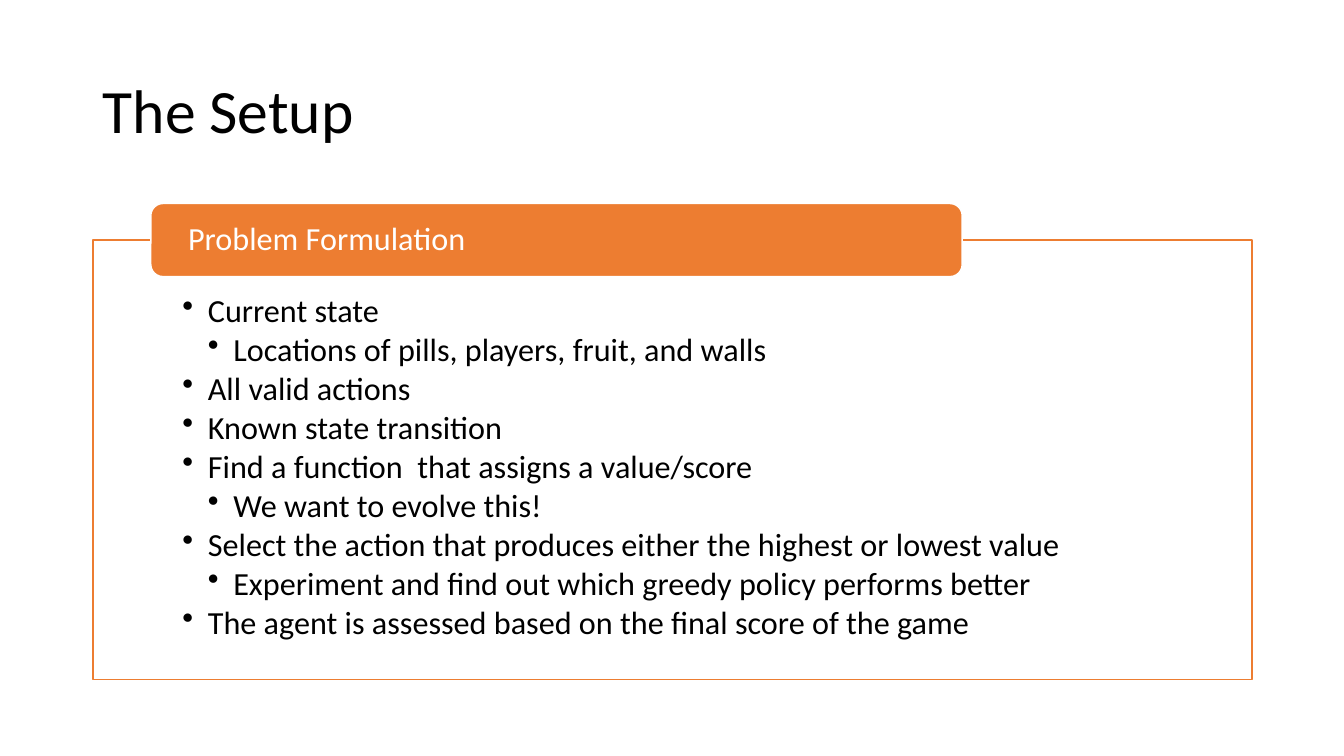
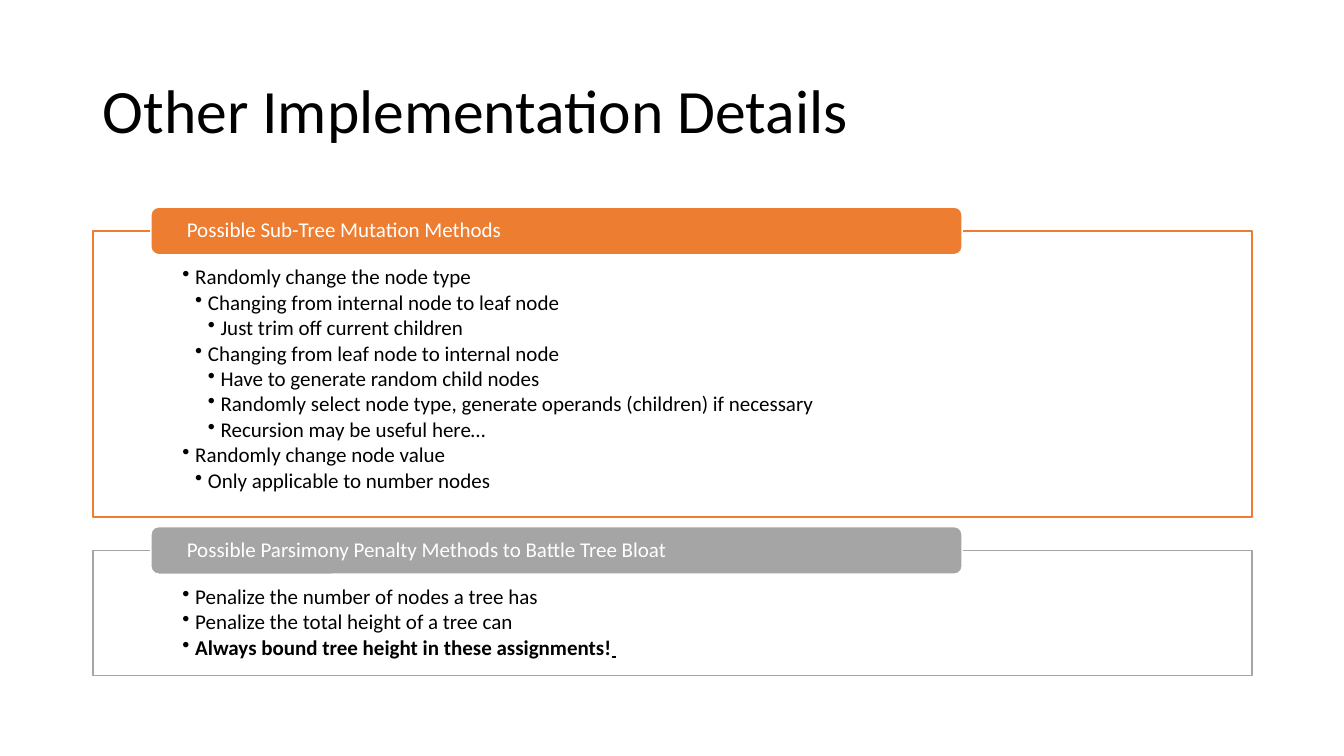
from lxml import etree
from pptx import Presentation
from pptx import util as u
from pptx.dml.color import RGBColor
from pptx.enum import shapes, text
from pptx.oxml.ns import qn

BLACK = RGBColor(0x00, 0x00, 0x00)
WHITE = RGBColor(0xFF, 0xFF, 0xFF)
ORANGE = RGBColor(0xED, 0x7D, 0x31)
GRAY = RGBColor(0xA5, 0xA5, 0xA5)

SETUP = [
    (1, "Current state"),
    (2, "Locations of pills, players, fruit, and walls"),
    (1, "All valid actions"),
    (1, "Known state transition"),
    (1, "Find a function  that assigns a value/score"),
    (2, "We want to evolve this!"),
    (1, "Select the action that produces either the highest or lowest value"),
    (2, "Experiment and find out which greedy policy performs better"),
    (1, "The agent is assessed based on the final score of the game"),
]
MUTATION = [
    (1, "Randomly change the node type"),
    (2, "Changing from internal node to leaf node"),
    (3, "Just trim off current children"),
    (2, "Changing from leaf node to internal node"),
    (3, "Have to generate random child nodes"),
    (3, "Randomly select node type, generate operands (children) if necessary"),
    (3, "Recursion may be useful here…"),
    (1, "Randomly change node value"),
    (2, "Only applicable to number nodes"),
]
PARSIMONY = [
    (1, "Penalize the number of nodes a tree has"),
    (1, "Penalize the total height of a tree can"),
    (1, "Always bound tree height in these assignments!"),
]


class Slides:
    font = "Calibri"
    left, width = 2.34, 29.21

    def __init__(self):
        self.deck = Presentation()
        self.deck.slide_width = u.Cm(33.87)
        self.deck.slide_height = u.Cm(19.05)
        self.page = None

    def start(self, title):
        self.page = self.deck.slides.add_slide(self.deck.slide_layouts[6])
        box = self.page.shapes.add_textbox(
            u.Cm(self.left), u.Cm(1.01), u.Cm(self.width), u.Cm(3.68))
        box.text_frame.word_wrap = True
        box.text_frame.vertical_anchor = text.MSO_ANCHOR.MIDDLE
        self.set_text(box.text_frame.paragraphs[0], title, 44, BLACK)

    def set_text(self, para, words, size, color):
        para.text = words
        para.alignment = text.PP_ALIGN.LEFT
        para.line_spacing = 0.9
        para.font.name = self.font
        para.font.size = u.Pt(size)
        para.font.color.rgb = color

    def bullet(self, para, level, step):
        para.level = level - 1
        props = para._p.get_or_add_pPr()
        props.set("marL", str(u.Cm(step * level)))
        props.set("indent", str(-u.Cm(step)))
        etree.SubElement(props, qn("a:buChar")).set("char", "•")

    def block(self, kind, place, fill, line, margins, anchor):
        box = self.page.shapes.add_shape(kind, *map(u.Cm, place))
        box.shadow.inherit = False
        box.fill.solid()
        box.fill.fore_color.rgb = fill
        box.line.color.rgb = line
        box.line.width = u.Pt(1)
        frame = box.text_frame
        frame.word_wrap = True
        frame.vertical_anchor = anchor
        side, top, bottom = map(u.Cm, margins)
        frame.margin_left = frame.margin_right = side
        frame.margin_top, frame.margin_bottom = top, bottom
        return frame

    def panel(self, heading, items, top, height, size, step, color):
        frame = self.block(
            shapes.MSO_SHAPE.RECTANGLE, (self.left, top, self.width, height),
            WHITE, color, (2.26, size * 0.06, size * 0.02), text.MSO_ANCHOR.TOP)
        for index, (level, words) in enumerate(items):
            para = frame.add_paragraph() if index else frame.paragraphs[0]
            self.bullet(para, level, step)
            self.set_text(para, words, size, BLACK)
            para.space_after = u.Pt(size * 0.13)
        tab_height = size * 0.08
        tab = self.block(
            shapes.MSO_SHAPE.ROUNDED_RECTANGLE,
            (self.left + self.width * 0.05, top - tab_height / 2,
             self.width * 0.7, tab_height),
            color, WHITE, (0.85, 0, 0), text.MSO_ANCHOR.MIDDLE)
        self.set_text(tab.paragraphs[0], heading, size, WHITE)
        return frame


def main():
    slides = Slides()
    slides.start("The Setup")
    slides.panel("Problem Formulation", SETUP, 6.05, 11.07, 23, 0.64, ORANGE)

    slides.start("Other Implementation Details")
    slides.panel("Possible Sub-Tree Mutation Methods", MUTATION,
                 5.82, 7.21, 15, 0.32, ORANGE)
    penalties = slides.panel(
        "Possible Parsimony Penalty Methods to Battle Tree Bloat", PARSIMONY,
        13.87, 3.15, 15, 0.32, GRAY)
    rule = penalties.paragraphs[-1]
    rule.font.bold = True
    span = rule.add_run()
    span.text = " "
    span.font.underline = True

    slides.deck.save("out.pptx")


if __name__ == "__main__":
    main()
